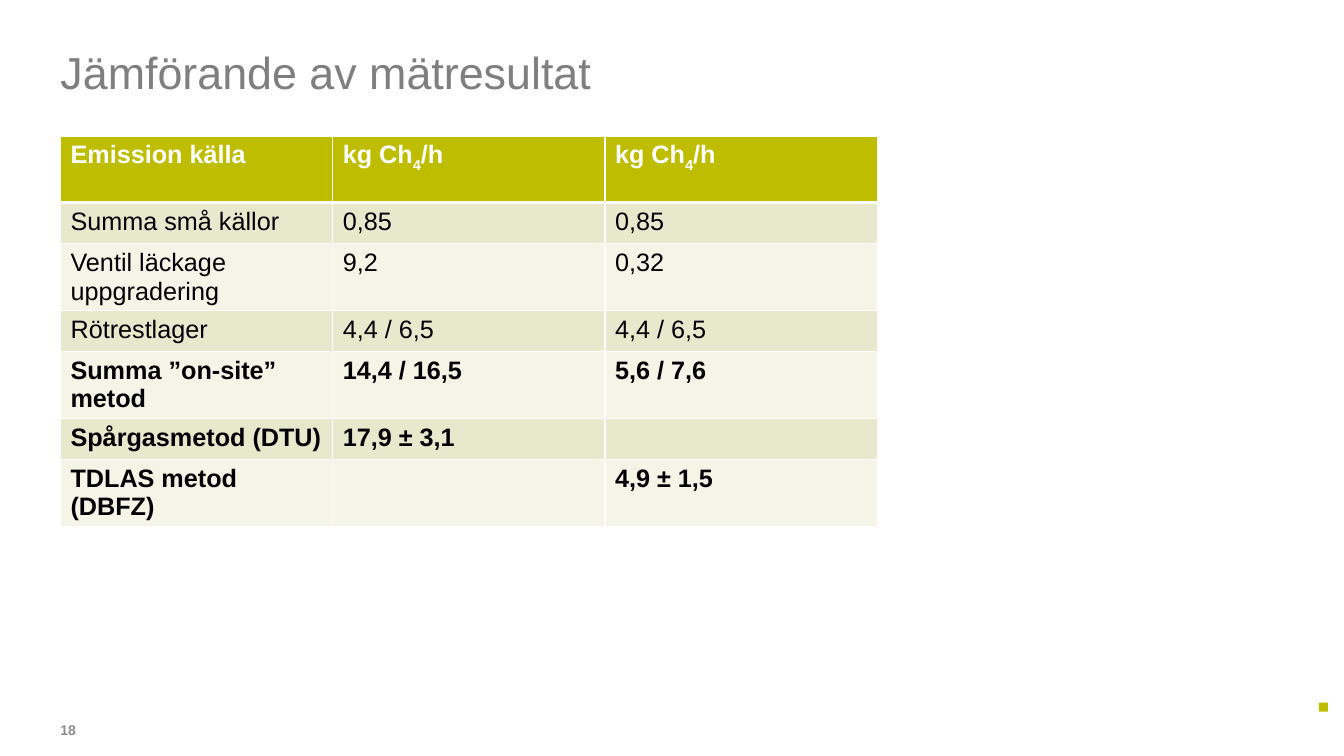
from pptx import Presentation
from pptx.dml.color import RGBColor
from pptx.enum.shapes import MSO_SHAPE
from pptx.enum.text import MSO_ANCHOR, MSO_AUTO_SIZE, PP_ALIGN
from pptx.oxml import parse_xml
from pptx.oxml.ns import nsdecls
from pptx.util import Inches, Pt

LIME = RGBColor(0xBE, 0xBD, 0x00)
BAND_DARK = RGBColor(0xE8, 0xE8, 0xCC)
BAND_LIGHT = RGBColor(0xF4, 0xF4, 0xE7)
WHITE = RGBColor(0xFF, 0xFF, 0xFF)
BLACK = RGBColor(0x00, 0x00, 0x00)
TITLE_GRAY = RGBColor(0x7F, 0x7F, 0x7F)
NUMBER_GRAY = RGBColor(0x8C, 0x8C, 0x8C)

LEFT = Inches(0.6)
METHANE = ("kg Ch", "4", "/h")  # the middle part is a subscript
ROWS = [
    ("Emission källa", METHANE, METHANE),
    ("Summa små källor", "0,85", "0,85"),
    ("Ventil läckage uppgradering", "9,2", "0,32"),
    ("Rötrestlager", "4,4 / 6,5", "4,4 / 6,5"),
    ("Summa ”on-site” metod", "14,4 / 16,5", "5,6 / 7,6"),
    ("Spårgasmetod (DTU)", "17,9 ± 3,1", ""),
    ("TDLAS metod (DBFZ)", "", "4,9 ± 1,5"),
]
FIRST_BOLD_ROW = 4
TALL, SHORT = 0.66, 0.41


def set_font(paragraph, size, color, bold=False):
    font = paragraph.font
    font.name = "Arial"
    font.size = Pt(size)
    font.bold = bold
    font.color.rgb = color


def set_borders(cell, bottom_width):
    properties = cell._tc.get_or_add_tcPr()
    widths = {"lnL": 1, "lnR": 1, "lnT": 1, "lnB": bottom_width}
    for position, (side, width) in enumerate(widths.items()):
        properties.insert(position, parse_xml(
            f'<a:{side} {nsdecls("a")} w="{Pt(width)}"><a:solidFill>'
            f'<a:srgbClr val="{WHITE}"/></a:solidFill></a:{side}>'))


presentation = Presentation()
presentation.slide_width = Inches(13.33)
presentation.slide_height = Inches(7.5)
slide = presentation.slides.add_slide(presentation.slide_layouts[5])

# Title
title = slide.shapes.title
title.left, title.top = LEFT, Inches(0.44)
title.width, title.height = Inches(8.11), Inches(0.54)
frame = title.text_frame
frame.margin_left = frame.margin_right = frame.margin_top = frame.margin_bottom = 0
frame.vertical_anchor = MSO_ANCHOR.TOP
frame.auto_size = MSO_AUTO_SIZE.NONE
frame.text = "Jämförande av mätresultat"
frame.paragraphs[0].alignment = PP_ALIGN.LEFT
set_font(frame.paragraphs[0], 32, TITLE_GRAY)

# Accent square at the right edge
square = slide.shapes.add_shape(
    MSO_SHAPE.RECTANGLE, Inches(13.08), Inches(6.97), Inches(0.09), Inches(0.09))
square.shadow.inherit = False
square.fill.solid()
square.fill.fore_color.rgb = LIME
square.line.fill.background()

# Results table
table = slide.shapes.add_table(
    len(ROWS), 3, LEFT, Inches(1.35), Inches(8.11), Inches(3.85)).table
for column in table.columns:
    column.width = Inches(2.7)
for row_index, values in enumerate(ROWS):
    is_header = row_index == 0
    table.rows[row_index].height = Inches(SHORT if row_index % 2 else TALL)
    for column_index, value in enumerate(values):
        cell = table.cell(row_index, column_index)
        cell.fill.solid()
        band = BAND_DARK if row_index % 2 else BAND_LIGHT
        cell.fill.fore_color.rgb = LIME if is_header else band
        set_borders(cell, 3 if is_header else 1)
        paragraph = cell.text_frame.paragraphs[0]
        set_font(paragraph, 18, WHITE if is_header else BLACK,
                 is_header or row_index >= FIRST_BOLD_ROW)
        if value == METHANE:
            for part in METHANE:
                run = paragraph.add_run()
                run.text = part
                if part == "4":
                    run._r.get_or_add_rPr().set("baseline", "-25000")
        elif value:
            paragraph.add_run().text = value

# Slide number
number = slide.shapes.add_textbox(LEFT, Inches(7.11), Inches(0.17), Inches(0.27))
frame = number.text_frame
frame.margin_left = frame.margin_right = 0
frame.vertical_anchor = MSO_ANCHOR.MIDDLE
frame.word_wrap = False
frame.text = "18"
set_font(frame.paragraphs[0], 10, NUMBER_GRAY, True)

presentation.save("out.pptx")
